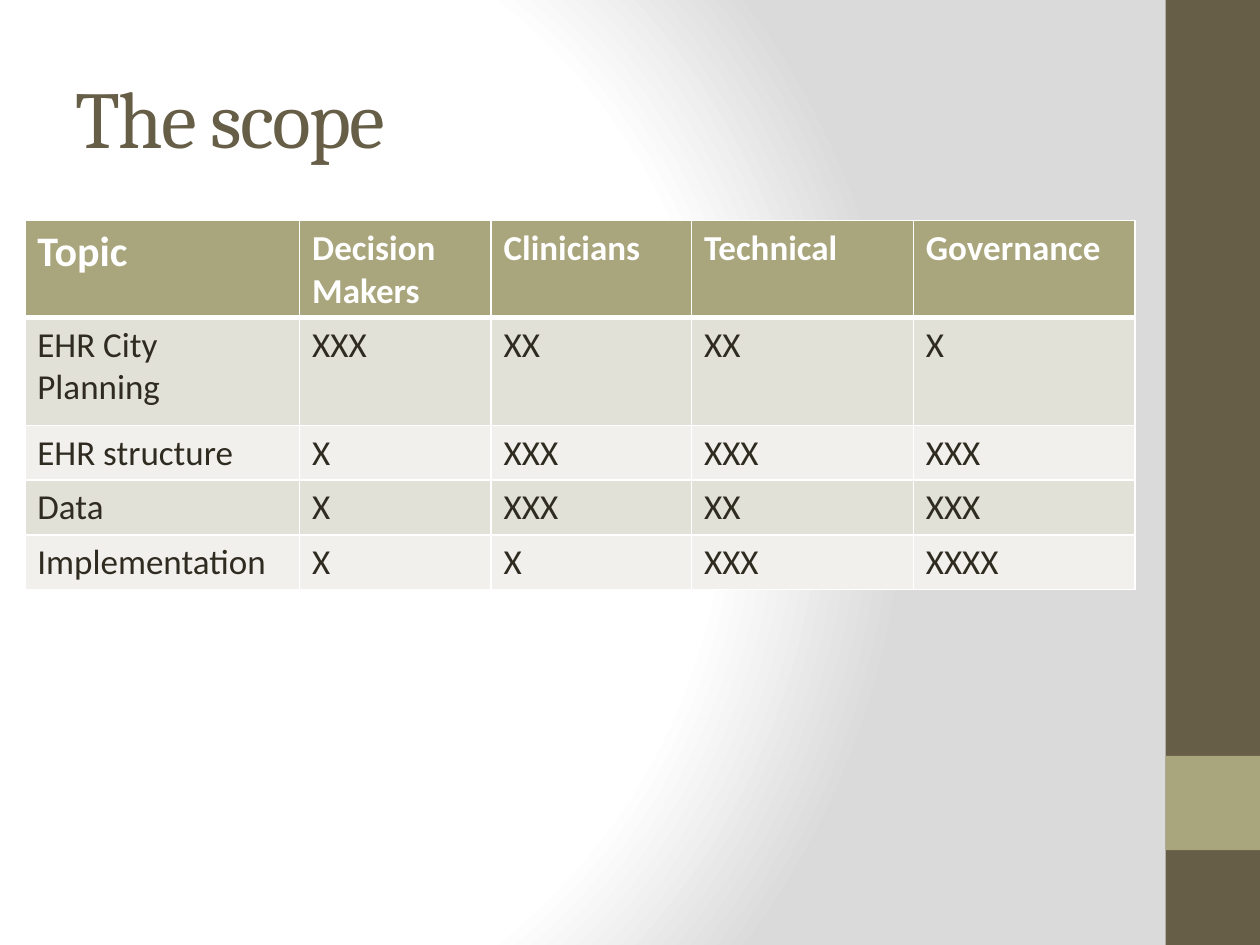
from lxml import etree
from pptx import Presentation
from pptx.dml.color import RGBColor
from pptx.enum.shapes import MSO_SHAPE as Preset
from pptx.enum.text import MSO_ANCHOR as Anchor
from pptx.oxml import parse_xml
from pptx.oxml.ns import nsdecls, qn
from pptx.util import Cm, Pt

COLORS = {
    "white": "FFFFFF",
    "shade": "DADADA",
    "brown": "675E47",
    "olive": "A9A57C",
    "text": "2F2B20",
    "band_dark": "E2E1D7",
    "band_light": "F1F0EC",
}

ROWS = [
    ["Topic", "Decision Makers", "Clinicians", "Technical", "Governance"],
    ["EHR City Planning", "XXX", "XX", "XX", "X"],
    ["EHR structure", "X", "XXX", "XXX", "XXX"],
    ["Data", "X", "XXX", "XX", "XXX"],
    ["Implementation", "X", "X", "XXX", "XXXX"],
]
COLUMN_WIDTHS = [5.54, 3.86, 4.04, 4.47, 4.47]
ROW_HEIGHTS = [1.04, 2.18, 1.04, 1.04, 1.04]


def rgb(name):
    return RGBColor.from_string(COLORS[name])


def set_background(slide):
    """Radial gradient, white at the left and grey towards the right."""
    slide.background.fill.solid()
    properties = slide.element.find(".//" + qn("p:bgPr"))
    stops = "".join(
        f'<a:gs pos="{position * 1000}"><a:srgbClr val="{COLORS[name]}"/></a:gs>'
        for position, name in [(0, "white"), (75, "white"), (100, "shade")]
    )
    gradient = parse_xml(
        f'<a:gradFill {nsdecls("a")} rotWithShape="1"><a:gsLst>{stops}</a:gsLst>'
        '<a:path path="circle">'
        '<a:fillToRect l="20000" t="50000" r="100000" b="50000"/>'
        "</a:path></a:gradFill>"
    )
    properties.replace(properties[0], gradient)


def add_block(slide, left, top, width, height, color):
    shape = slide.shapes.add_shape(
        Preset.RECTANGLE, Cm(left), Cm(top), Cm(width), Cm(height))
    shape.shadow.inherit = False
    shape.fill.solid()
    shape.fill.fore_color.rgb = rgb(color)
    shape.line.fill.background()


def style_paragraph(paragraph, font_name, size, color, bold=False):
    font = paragraph.font
    font.name = font_name
    font.size = Pt(size)
    font.bold = bold
    font.color.rgb = rgb(color)


def add_title(slide, text):
    box = slide.shapes.add_textbox(Cm(1.27), Cm(0.76), Cm(21.16), Cm(3.18))
    frame = box.text_frame
    frame.word_wrap = True
    frame.vertical_anchor = Anchor.MIDDLE
    paragraph = frame.paragraphs[0]
    run = paragraph.add_run()
    run.text = text
    style_paragraph(paragraph, "Cambria", 46, "brown")
    run.font._element.set("spc", "-100")


def set_borders(cell, top, bottom):
    """White borders; they must precede the fill in the cell properties."""
    properties = cell._tc.get_or_add_tcPr()
    widths = {"lnL": 1, "lnR": 1, "lnT": top, "lnB": bottom}
    for index, (tag, width) in enumerate(widths.items()):
        line = etree.Element(qn("a:" + tag), w=str(Pt(width)))
        fill = etree.SubElement(line, qn("a:solidFill"))
        etree.SubElement(fill, qn("a:srgbClr"), val=COLORS["white"])
        properties.insert(index, line)


def style_cell(cell, row, column):
    header = row == 0
    band = "band_dark" if row % 2 else "band_light"
    cell.fill.solid()
    cell.fill.fore_color.rgb = rgb("olive" if header else band)
    set_borders(cell, top=3 if row == 1 else 1, bottom=3 if header else 1)
    style_paragraph(
        cell.text_frame.paragraphs[0], "Calibri",
        24 if header and column == 0 else 20,
        "white" if header else "text", bold=header)


def add_scope_table(slide):
    height = Cm(7.42)
    graphic_frame = slide.shapes.add_table(
        len(ROWS), len(COLUMN_WIDTHS),
        Cm(0.5), Cm(4.45), Cm(sum(COLUMN_WIDTHS)), height)
    table = graphic_frame.table
    for column, width in zip(table.columns, COLUMN_WIDTHS):
        column.width = Cm(width)
    for row, row_height in zip(table.rows, ROW_HEIGHTS):
        row.height = Cm(row_height)
    graphic_frame.height = height
    for row, texts in enumerate(ROWS):
        for column, text in enumerate(texts):
            cell = table.cell(row, column)
            cell.text = text
            style_cell(cell, row, column)


def main():
    presentation = Presentation()
    presentation.slide_width = Cm(25.4)
    presentation.slide_height = Cm(19.05)
    slide = presentation.slides.add_slide(presentation.slide_layouts[6])

    # Background and side band
    set_background(slide)
    add_block(slide, 23.5, 0, 1.9, 19.05, "brown")
    add_block(slide, 23.5, 15.24, 1.9, 1.9, "olive")

    # Content
    add_title(slide, "The scope")
    add_scope_table(slide)

    presentation.save("out.pptx")


if __name__ == "__main__":
    main()
